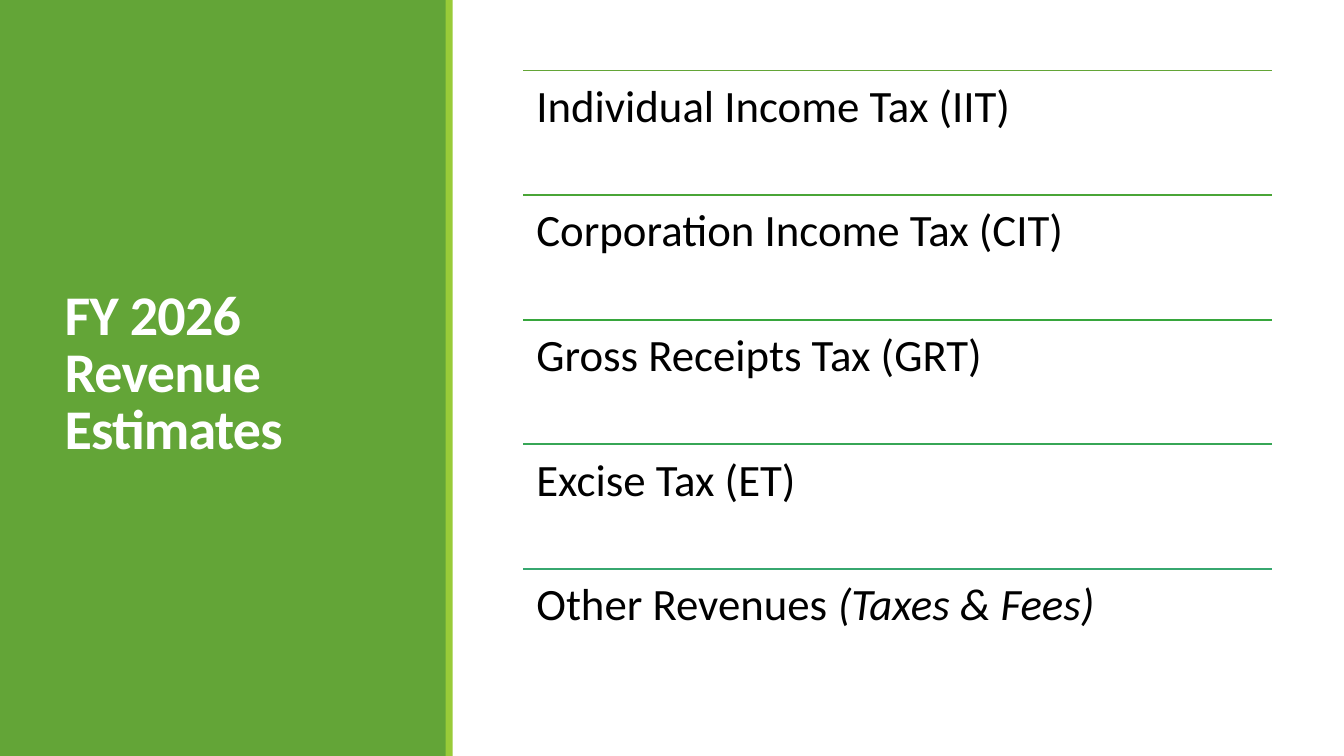
from lxml.etree import SubElement
from pptx import Presentation
from pptx.dml.color import RGBColor
from pptx.enum.shapes import MSO_CONNECTOR, MSO_SHAPE
from pptx.enum.text import MSO_ANCHOR, MSO_AUTO_SIZE, PP_ALIGN
from pptx.oxml.ns import qn
from pptx.util import Inches, Pt

GREEN, LIME, WHITE, BLACK = "63A537", "99CB38", "FFFFFF", "000000"
ROWS = [
    ("63A537", "Individual Income Tax (IIT)", ""),
    ("4AA537", "Corporation Income Tax (CIT)", ""),
    ("37A63D", "Gross Receipts Tax (GRT)", ""),
    ("37A656", "Excise Tax (ET)", ""),
    ("37A76F", "Other Revenues ", "(Taxes & Fees)"),
]


def paint(target, color):
    """Give a fill a solid colour."""
    target.solid()
    target.fore_color.rgb = RGBColor.from_string(color)


def add_run(para, text, size, color, bold=False, italic=False):
    run = para.add_run()
    run.text = text
    font = run.font
    font.name, font.size = "Calibri", Pt(size)
    font.bold, font.italic = bold, italic
    paint(font.fill, color)
    return run


def add_bar(slide, left, top, width, height, color):
    bar = slide.shapes.add_shape(
        MSO_SHAPE.RECTANGLE, Inches(left), Inches(top), Inches(width), Inches(height))
    bar.shadow.inherit = False
    paint(bar.fill, color)
    bar.line.fill.background()
    return bar


def add_rule(slide, left, top, width, color):
    rule = slide.shapes.add_connector(
        MSO_CONNECTOR.STRAIGHT, Inches(left), Inches(top), Inches(left + width), Inches(top))
    paint(rule.line.fill, color)
    rule.line.width = Pt(1.25)
    SubElement(rule.element.spPr, qn("a:effectLst"))


def add_panel(slide, left, top, width, height):
    """Draw the green side panel with its edge and the slide title."""
    title = slide.shapes.title
    panel = add_bar(slide, left, top, width, height, GREEN)
    edge = add_bar(slide, left + width - 0.01, top, 0.07, height, LIME)
    for bar in (panel, edge):
        title.element.addprevious(bar.element)
    title.left, title.top = Inches(left + 0.54), Inches(top + 0.57)
    title.width, title.height = Inches(3.37), Inches(6.31)
    frame = title.text_frame
    frame.word_wrap = True
    frame.auto_size = MSO_AUTO_SIZE.NONE
    frame.vertical_anchor = MSO_ANCHOR.MIDDLE
    para = frame.paragraphs[0]
    para.alignment = PP_ALIGN.LEFT
    para.line_spacing = 0.85
    first = add_run(para, "FY 2026 ", 40, WHITE, bold=True)
    para.add_line_break()
    second = add_run(para, "Revenue Estimates", 40, WHITE, bold=True)
    for run in (first, second):
        run.font._element.set("spc", "-50")


def add_row(slide, left, top, width, height, color, text, note):
    add_rule(slide, left, top, width, color)
    box = slide.shapes.add_textbox(
        Inches(left), Inches(top), Inches(width), Inches(height))
    frame = box.text_frame
    frame.word_wrap = True
    frame.margin_left = frame.margin_right = Inches(0.13)
    frame.margin_top = frame.margin_bottom = Inches(0.13)
    para = frame.paragraphs[0]
    para.line_spacing = 0.9
    add_run(para, text, 32, BLACK)
    if note:
        add_run(para, note, 32, BLACK, italic=True)


def add_list(slide, left, top, width, height):
    """Share the height equally among the ruled rows."""
    step = height / len(ROWS)
    for i, row in enumerate(ROWS):
        add_row(slide, left, top + i * step, width, step, *row)


def main():
    deck = Presentation()
    deck.slide_width, deck.slide_height = Inches(13.33), Inches(7.5)
    slide = deck.slides.add_slide(deck.slide_layouts[5])
    paint(slide.background.fill, WHITE)
    add_panel(slide, 0, 0, 4.43, 7.5)
    add_list(slide, 5.19, 0.7, 7.43, 6.18)
    deck.save("out.pptx")


if __name__ == "__main__":
    main()
